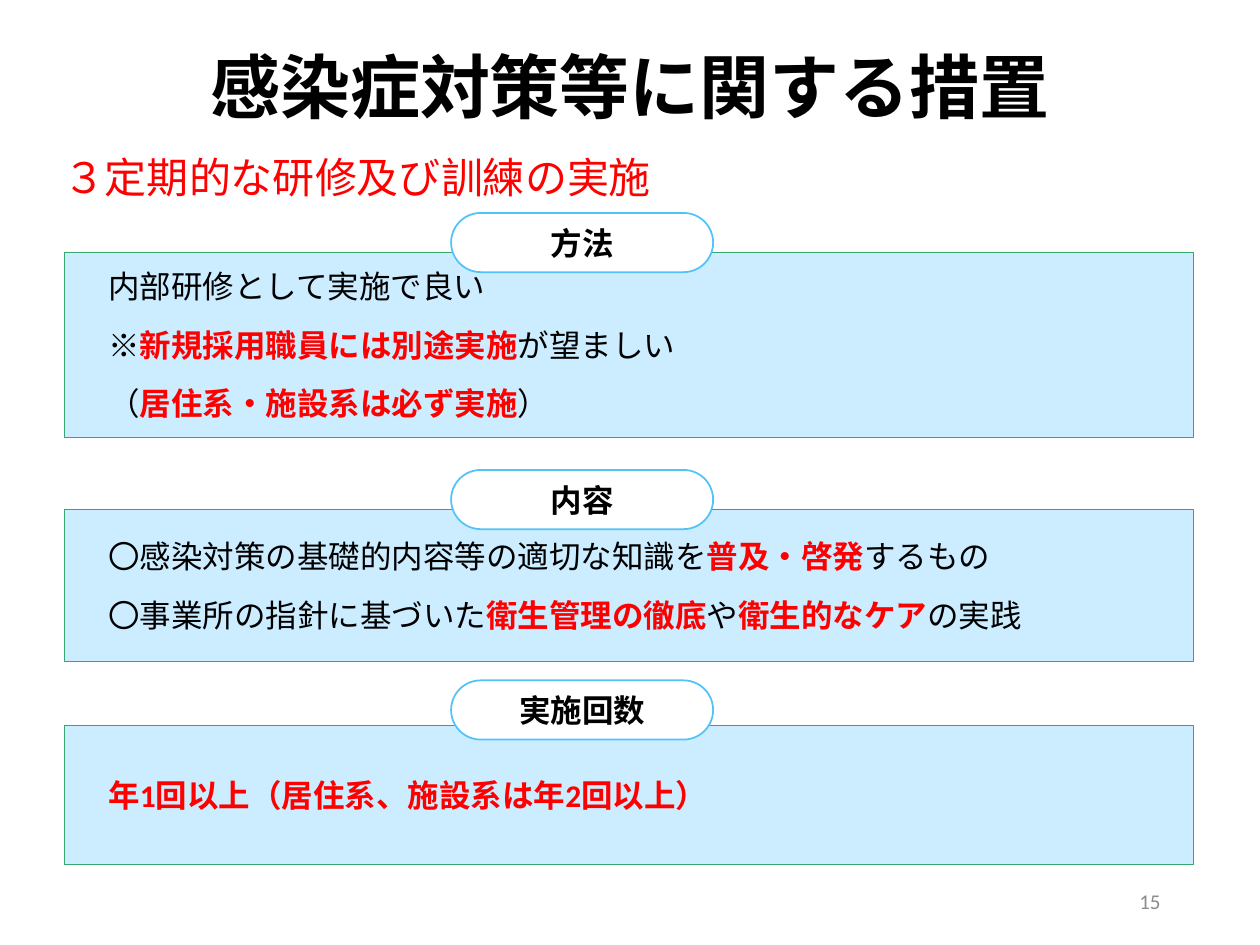
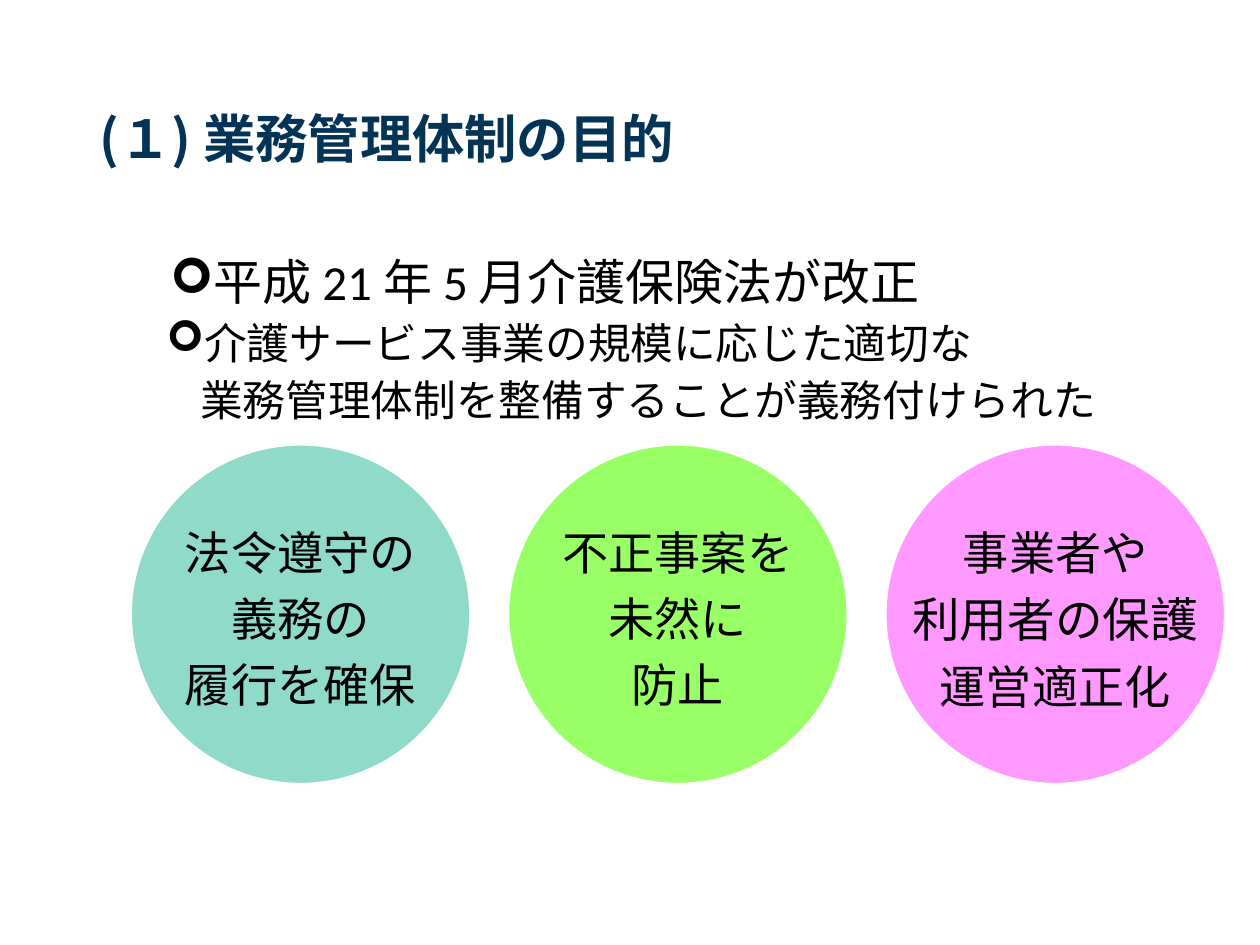
from dataclasses import dataclass

from lxml.etree import SubElement
from pptx import Presentation
from pptx.dml.color import RGBColor
from pptx.enum.shapes import MSO_SHAPE
from pptx.enum.text import MSO_ANCHOR, MSO_AUTO_SIZE, PP_ALIGN
from pptx.oxml.ns import qn
from pptx.util import Inches, Pt


@dataclass(frozen=True)
class Theme:
    latin: str = "Calibri"
    asian: str = "Noto Sans CJK JP"
    black: str = "000000"
    red: str = "FF0000"
    navy: str = "033355"
    grey: str = "8C8C8C"
    white: str = "FFFFFF"
    panel: str = "CCECFF"
    edge: str = "37A76F"
    ring: str = "51C3F9"
    main: float = 40
    head: float = 29.9
    sub: float = 24
    text: float = 18
    page: float = 12
    lead: float = 28
    note: float = 24.4
    goal: float = 26.4
    wide: float = 27.2


T = Theme()

# Content: a run is plain text, or ("red", text) for stress
MAIN = "感染症対策等に関する措置"
SUB = "３定期的な研修及び訓練の実施"
PAGE = "15"
PANELS = [  # label, label top, panel top, panel height, lines
    ("方法", 1.69, 2, 1.47, [
        ["内部研修として実施で良い"],
        ["※", ("red", "新規採用職員には別途実施"), "が望ましい"],
        ["（", ("red", "居住系・施設系は必ず実施"), "）"]]),
    ("内容", 3.73, 4.04, 1.21, [
        ["〇感染対策の基礎的内容等の適切な知識を", ("red", "普及・啓発"), "するもの"],
        ["〇事業所の指針に基づいた", ("red", "衛生管理の徹底"), "や",
         ("red", "衛生的なケア"), "の実践"]]),
    ("実施回数", 5.4, 5.76, 1.1, [
        [("red", "年1回以上（居住系、施設系は年2回以上）")]]),
]

HEAD = "(１) 業務管理体制の目的"
LEAD = "平成 21 年 5 月介護保険法が改正"
NOTES = ["介護サービス事業の規模に応じた適切な",
         "業務管理体制を整備することが義務付けられた"]
GOALS = [  # fill, caption width, lines with sizes
    ("8FDAC8", 2.03, [("法令遵守の", T.goal), ("義務の", T.goal), ("履行を確保", T.goal)]),
    ("99FF66", 2.03, [("不正事案を", T.goal), ("未然に", T.goal), ("防止", T.goal)]),
    ("FF99FF", 3.05, [("事業者や", T.goal), ("利用者の保護", T.wide), ("運営適正化", T.goal)]),
]


# Text helpers
def add_run(para, text, size, color=T.black, bold=False, face=T.latin):
    run = para.add_run()
    run.text = text
    font = run.font
    font.name, font.size, font.bold = face, Pt(size), bold
    font.color.rgb = RGBColor.from_string(color)
    SubElement(font._element, qn("a:ea"), typeface=T.asian)


def set_para(frame, index, align=PP_ALIGN.LEFT, line=None, before=0, after=0):
    para = frame.paragraphs[0] if index == 0 else frame.add_paragraph()
    para.alignment, para.line_spacing = align, line
    para.space_before, para.space_after = Pt(before), Pt(after)
    return para


def set_indent(para, left, first, bullet=None):
    props = para._p.get_or_add_pPr()
    props.set("marL", str(Inches(left)))
    props.set("indent", str(Inches(first)))
    if bullet:
        SubElement(props, qn("a:buFont"), typeface="Wingdings")
        SubElement(props, qn("a:buChar"), char=bullet)


def set_frame(shape, anchor=MSO_ANCHOR.MIDDLE, inset=None):
    frame = shape.text_frame
    frame.word_wrap, frame.auto_size = True, MSO_AUTO_SIZE.NONE
    frame.vertical_anchor = anchor
    if inset:
        frame.margin_left = frame.margin_right = Inches(inset[0])
        frame.margin_top = frame.margin_bottom = Inches(inset[1])
    return frame


# Shape helpers
def place(shape, box):
    shape.left, shape.top, shape.width, shape.height = map(Inches, box)


def add_box(slide, box, anchor=MSO_ANCHOR.MIDDLE, inset=None):
    return set_frame(slide.shapes.add_textbox(*map(Inches, box)), anchor, inset)


def add_form(slide, kind, box, fill, line, width):
    shape = slide.shapes.add_shape(kind, *map(Inches, box))
    shape.shadow.inherit = False
    shape.fill.solid()
    shape.fill.fore_color.rgb = RGBColor.from_string(fill)
    shape.line.color.rgb = RGBColor.from_string(line)
    shape.line.width = Pt(width)
    return shape


def set_title(slide, box, text, size, color, **style):
    title = slide.shapes.title
    place(title, box)
    add_run(set_para(set_frame(title), 0, line=0.9), text, size, color, **style)


# Slide 1: three labelled panels
def add_panel(slide, label, tab, top, high, lines):
    panel = add_form(slide, MSO_SHAPE.RECTANGLE, (0.51, top, 8.96, high),
                     T.panel, T.edge, 0.5)
    frame = set_frame(panel)
    frame.margin_left = Inches(0.35)
    for i, line in enumerate(lines):
        para = set_para(frame, i, before=6, after=6)
        for part in line:
            if isinstance(part, tuple):
                add_run(para, part[1], T.text, T.red, True)
            else:
                add_run(para, part, T.text)
    pill = add_form(slide, MSO_SHAPE.ROUNDED_RECTANGLE, (3.58, tab, 2.08, 0.47),
                    T.white, T.ring, 1)
    pill.adjustments[0] = 0.5
    add_run(set_para(set_frame(pill), 0, PP_ALIGN.CENTER), label, T.text, bold=True)


def build_steps(deck):
    slide = deck.slides.add_slide(deck.slide_layouts[5])
    set_title(slide, (0.4, 1.17, 8.9, 0.51), SUB, T.sub, T.red)
    main = add_box(slide, (1.57, 0.11, 7.32, 1.22))
    add_run(set_para(main, 0, line=0.9), MAIN, T.main, bold=True)
    for panel in PANELS:
        add_panel(slide, *panel)
    page = add_box(slide, (7.06, 6.95, 2.25, 0.4))
    add_run(set_para(page, 0, PP_ALIGN.RIGHT), PAGE, T.page, T.grey)


# Slide 2: two notes over three goals
def build_goals(deck):
    slide = deck.slides.add_slide(deck.slide_layouts[1])
    set_title(slide, (0.69, 0.4, 8.62, 1.45), HEAD, T.head, T.navy,
              bold=True, face=T.asian)

    body = slide.placeholders[1]
    place(body, (1.25, 2, 8.29, 0.76))
    para = set_para(set_frame(body, MSO_ANCHOR.TOP), 0, line=0.9, before=10)
    set_indent(para, 0.25, -0.25, "➢")
    add_run(para, LEAD, T.lead)

    inset = (0.07, 0.03)
    frame = add_box(slide, (1.25, 2.56, 8.29, 0.86), MSO_ANCHOR.TOP, inset)
    indents = [(0.24, -0.24, "➢"), (0, 0.27)]
    for i, (text, indent) in enumerate(zip(NOTES, indents)):
        para = set_para(frame, i, line=0.8, before=9.4)
        set_indent(para, *indent)
        add_run(para, text, T.note, face=T.asian)

    size, step = 2.69, 2.995
    for n, (fill, wide, lines) in enumerate(GOALS):
        left = 1.04 + n * step
        add_form(slide, MSO_SHAPE.OVAL, (left, 3.53, size, size), fill, T.white, 1)
        box = (left + (size - wide) / 2, 4.18, wide, 1.75)
        frame = add_box(slide, box, MSO_ANCHOR.TOP, inset)
        for i, (text, points) in enumerate(lines):
            para = set_para(frame, i, PP_ALIGN.CENTER, 0.9, 9.4)
            add_run(para, text, points, face=T.asian)


def main():
    deck = Presentation()
    deck.slide_width, deck.slide_height = Inches(10), Inches(7.5)
    build_steps(deck)
    build_goals(deck)
    deck.save("out.pptx")


if __name__ == "__main__":
    main()
